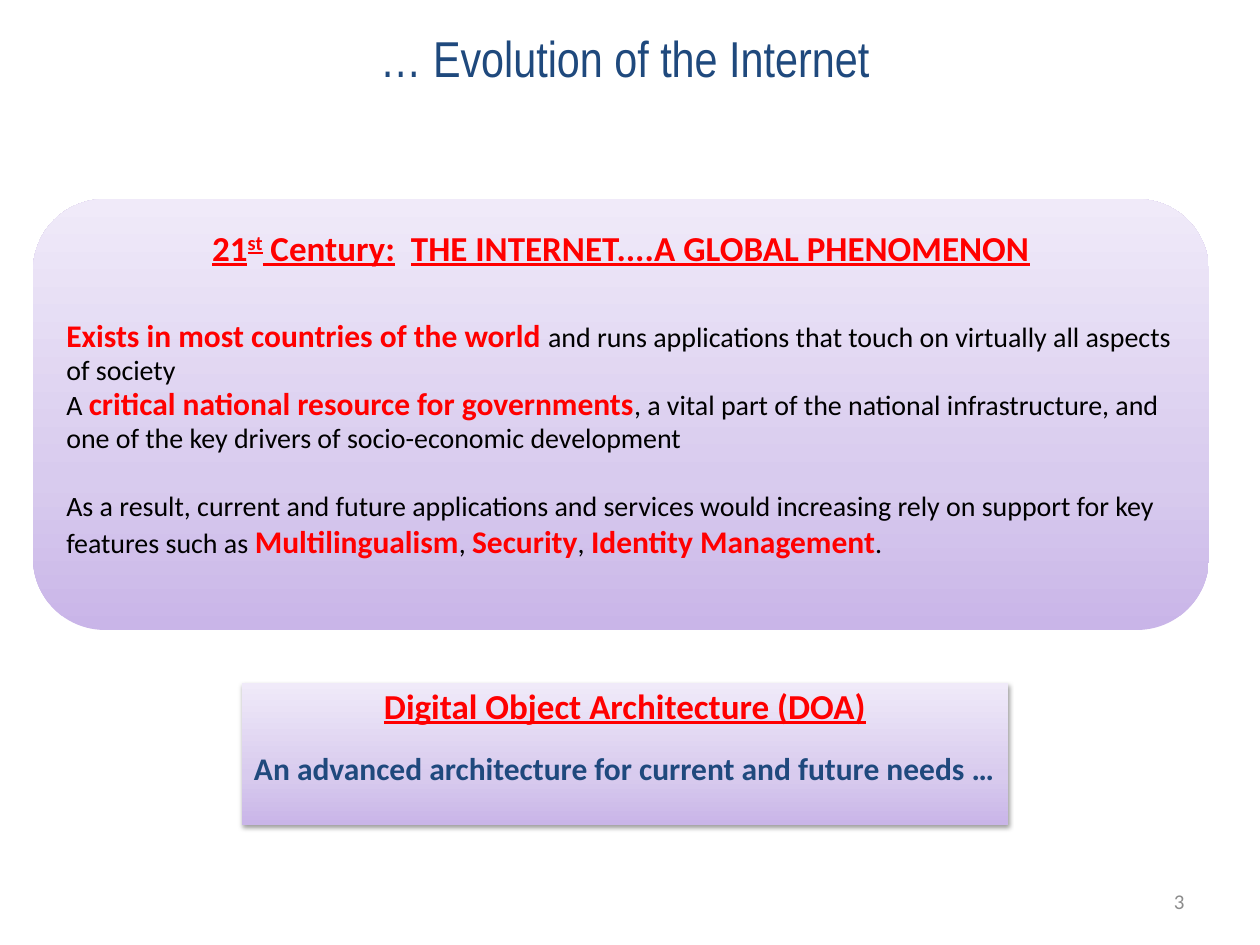
from copy import deepcopy

from lxml.etree import SubElement
from pptx import Presentation
from pptx.dml.color import RGBColor
from pptx.enum.shapes import MSO_SHAPE as Shape
from pptx.enum.text import MSO_ANCHOR as Anchor, PP_ALIGN as Align
from pptx.oxml.ns import qn
from pptx.util import Emu, Pt

PX = 914400 // 126
RED = RGBColor(0xFF, 0x00, 0x00)
NAVY = RGBColor(0x1F, 0x49, 0x7D)
BLACK = RGBColor(0x00, 0x00, 0x00)
GRAY = RGBColor(0x8C, 0x8C, 0x8C)
LILAC_STOPS = (
    (0, RGBColor(0xC9, 0xB5, 0xE8)),
    (0.35, RGBColor(0xD8, 0xCB, 0xEE)),
    (1, RGBColor(0xF0, 0xEA, 0xF9)),
)


def px(*lengths):
    """Turn pixel lengths into a list of EMU lengths."""
    return [Emu(length * PX) for length in lengths]


def add_span(para, text, size, color, bold=False, underline=False, font="Calibri"):
    """Add one formatted run to a paragraph and return it."""
    span = para.add_run()
    span.text = text
    span.font.name = font
    span.font.size = Pt(size)
    span.font.color.rgb = color
    span.font.bold = bold
    span.font.underline = underline
    return span


def add_para(frame, align=Align.LEFT, before=0, spacing=1.0):
    """Return the unused first paragraph, or a new one, with its spacing set."""
    first = frame.paragraphs[0]
    para = frame.add_paragraph() if first.runs else first
    para.alignment = align
    para.space_before = Pt(before)
    para.line_spacing = spacing
    return para


def add_lilac_box(page, kind, box):
    """Add an outline-free shape with the lilac gradient."""
    shape = page.shapes.add_shape(kind, *px(*box))
    shape.shadow.inherit = False
    shape.line.fill.background()
    shape.fill.gradient()
    shape.fill.gradient_angle = 90
    stop_list = shape.element.spPr.find(".//" + qn("a:gsLst"))
    stop_list.append(deepcopy(stop_list[0]))
    for stop, (position, color) in zip(shape.fill.gradient_stops, LILAC_STOPS):
        stop.position = position
        stop.color.rgb = color
    shape.text_frame.word_wrap = True
    return shape


def add_drop_shadow(shape):
    """Give a shape a soft shadow that falls straight down."""
    effects = shape.element.spPr.find(qn("a:effectLst"))
    shadow = SubElement(
        effects, qn("a:outerShdw"), blurRad=str(Pt(3.1)), dist=str(Pt(1.6)),
        dir="5400000", rotWithShape="0")
    color = SubElement(shadow, qn("a:srgbClr"), val="000000")
    SubElement(color, qn("a:alpha"), val="38000")


def place_title(page, box):
    """Move and fill the title placeholder."""
    title = page.shapes.title
    title.left, title.top, title.width, title.height = px(*box)
    title.text_frame.vertical_anchor = Anchor.MIDDLE
    para = add_para(title.text_frame, Align.CENTER)
    add_span(para, "… Evolution of the Internet", 28.8, NAVY, font="Arial Narrow")


def add_internet_panel(page, box):
    """Add the rounded panel about the Internet in the 21st century."""
    frame = add_lilac_box(page, Shape.FLOWCHART_ALTERNATE_PROCESS, box).text_frame
    frame.vertical_anchor = Anchor.TOP
    heading = add_para(frame, Align.CENTER)
    add_span(heading, "21", 20, RED, True, True)
    ordinal = add_span(heading, "st", 20, RED, True, True)
    ordinal.font._element.set("baseline", "30000")
    add_span(heading, " Century:", 20, RED, True, True)
    add_span(heading, "  ", 20, RED, True)
    add_span(heading, "THE INTERNET....A GLOBAL PHENOMENON", 20, RED, True, True)

    passages = (
        (29, 0.95, (
            ("Exists in most countries of the world ", True),
            ("and runs applications that touch on virtually all aspects of society", False))),
        (0, 0.95, (
            ("A ", False),
            ("critical national resource for governments", True),
            (", a vital part of the national infrastructure, and one of the key "
             "drivers of socio-economic development", False))),
        (19.5, 1.0, (
            ("As a result, current and future applications and services would "
             "increasing rely on support for key features such as ", False),
            ("Multilingualism", True), (", ", False),
            ("Security", True), (", ", False),
            ("Identity Management", True), (".", False))),
    )
    for before, spacing, parts in passages:
        para = add_para(frame, before=before, spacing=spacing)
        for text, strong in parts:
            add_span(para, text, 18 if strong else 16, RED if strong else BLACK, strong)


def add_architecture_box(page, box):
    """Add the shadowed box that names the architecture."""
    shape = add_lilac_box(page, Shape.RECTANGLE, box)
    add_drop_shadow(shape)
    frame = shape.text_frame
    frame.vertical_anchor = Anchor.MIDDLE
    frame.margin_left, frame.margin_right, frame.margin_bottom = px(12, 12, 35)
    heading = add_para(frame, Align.CENTER, spacing=0.8)
    add_span(heading, "Digital Object Architecture (DOA)", 20, RED, True, True)
    para = add_para(frame, before=17.5, spacing=0.8)
    add_span(para, "An advanced architecture for current and future needs …", 18, NAVY, True)


def add_page_number(page, box):
    """Add the page number at the lower right."""
    frame = page.shapes.add_textbox(*px(*box)).text_frame
    frame.word_wrap = True
    frame.vertical_anchor = Anchor.MIDDLE
    add_span(add_para(frame, Align.RIGHT), "3", 12, GRAY)


def main():
    """Build the slide and save the deck."""
    deck = Presentation()
    deck.slide_width, deck.slide_height = px(1260, 945)
    page = deck.slides.add_slide(deck.slide_layouts[5])
    place_title(page, (53, 21, 1144, 72))
    add_internet_panel(page, (33, 199, 1176, 431))
    add_architecture_box(page, (242, 683, 766, 142))
    add_page_number(page, (903, 876, 294, 50))
    deck.save("out.pptx")


if __name__ == "__main__":
    main()
